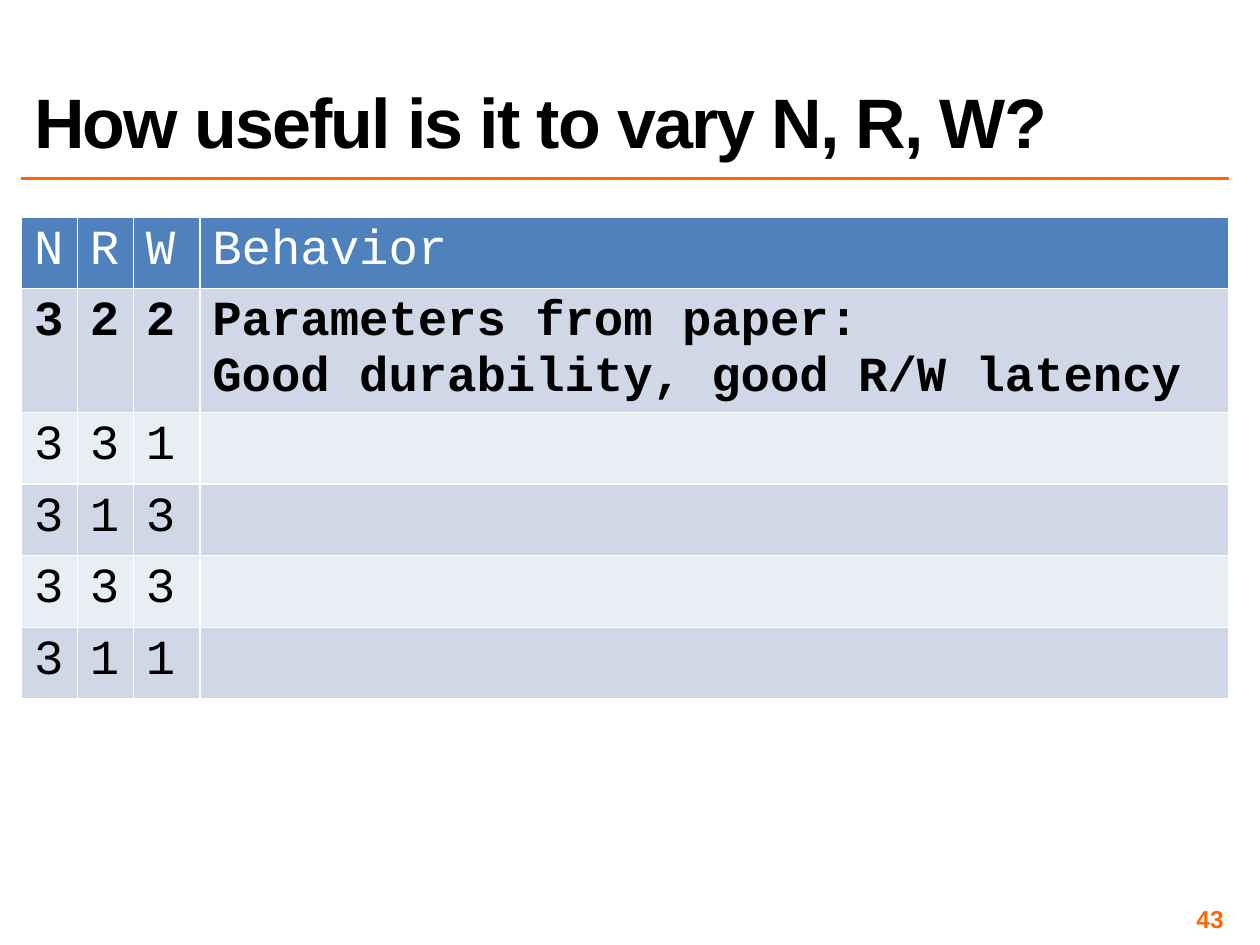
import pptx
import pptx.util
import pptx.dml.color
import pptx.enum.shapes
import pptx.enum.text
import pptx.oxml.ns
from lxml import etree

Pt = pptx.util.Pt
Anchor = pptx.enum.text.MSO_ANCHOR
Align = pptx.enum.text.PP_ALIGN

TITLE = "How useful is it to vary N, R, W?"
PAGE = "43"
HEADER = ("N", "R", "W", "Behavior")
SETTINGS = [
    ("3", "2", "2", "Parameters from paper:\nGood durability, good R/W latency"),
    ("3", "3", "1", ""),
    ("3", "1", "3", ""),
    ("3", "3", "3", ""),
    ("3", "1", "1", ""),
]
COLUMN_WIDTHS = (32, 32, 38, 588)
ROW_HEIGHT, PAPER_ROW_HEIGHT = 41, 70
LEFT, WIDTH = 12.25, 690
ORANGE, BLACK, WHITE = "FF6600", "000000", "FFFFFF"
HEADER_FILL, BANDS = "4F81BD", ("D0D8E8", "E9EDF4")


def rgb(value):
    return pptx.dml.color.RGBColor.from_string(value)


def style(text_frame, font_name, size, color, bold):
    for paragraph in text_frame.paragraphs:
        for font in [paragraph.font] + [run.font for run in paragraph.runs]:
            font.name, font.size, font.bold = font_name, Pt(size), bold
            font.color.rgb = rgb(color)


def add_borders(cell, color, width):
    """Draw all four cell edges; they must precede the fill in the XML."""
    properties = cell._tc.get_or_add_tcPr()
    for position, edge in enumerate(("a:lnL", "a:lnR", "a:lnT", "a:lnB")):
        line = etree.Element(pptx.oxml.ns.qn(edge), w=str(Pt(width)))
        fill = etree.SubElement(line, pptx.oxml.ns.qn("a:solidFill"))
        etree.SubElement(fill, pptx.oxml.ns.qn("a:srgbClr"), val=color)
        properties.insert(position, line)


def add_title(slide):
    title = slide.shapes.title
    title.left, title.top, title.width, title.height = Pt(LEFT), Pt(12.25), Pt(WIDTH), Pt(84)
    frame = title.text_frame
    frame.text = TITLE
    frame.auto_size = pptx.enum.text.MSO_AUTO_SIZE.NONE
    frame.vertical_anchor = Anchor.BOTTOM
    heading = frame.paragraphs[0]
    heading.alignment, heading.line_spacing = Align.LEFT, 0.8
    style(frame, "Arial", 40, BLACK, True)
    heading.runs[0].font._element.set("spc", "-100")


def add_rule(slide):
    rule = slide.shapes.add_connector(
        pptx.enum.shapes.MSO_CONNECTOR.STRAIGHT, Pt(LEFT), Pt(102), Pt(LEFT + WIDTH), Pt(102))
    rule.line.color.rgb = rgb(ORANGE)
    rule.line.width = Pt(2)
    etree.SubElement(rule._element.spPr, pptx.oxml.ns.qn("a:effectLst"))


def add_settings_table(slide):
    rows = [HEADER] + SETTINGS
    heights = [PAPER_ROW_HEIGHT if "\n" in row[-1] else ROW_HEIGHT for row in rows]
    table = slide.shapes.add_table(
        len(rows), len(HEADER), Pt(LEFT), Pt(124), Pt(WIDTH), Pt(sum(heights))).table
    for column, width in zip(table.columns, COLUMN_WIDTHS):
        column.width = Pt(width)
    for r, (row, height) in enumerate(zip(rows, heights)):
        table.rows[r].height = Pt(height)
        for c, text in enumerate(row):
            cell = table.cell(r, c)
            cell.text_frame.text = text
            style(cell.text_frame, "Courier New", 28, BLACK if r else WHITE, r == 1)
            cell.fill.solid()
            cell.fill.fore_color.rgb = rgb(BANDS[(r - 1) % 2] if r else HEADER_FILL)
            add_borders(cell, WHITE, 1)


def add_page_number(slide):
    frame = slide.shapes.add_textbox(Pt(534.25), Pt(516.5), Pt(168), Pt(16.5)).text_frame
    frame.margin_left = frame.margin_right = frame.margin_top = frame.margin_bottom = Pt(3)
    frame.word_wrap = True
    frame.vertical_anchor = Anchor.MIDDLE
    frame.text = PAGE
    frame.paragraphs[0].alignment = Align.RIGHT
    style(frame, "Arial", 14, ORANGE, True)


def main():
    deck = pptx.Presentation()
    deck.slide_width, deck.slide_height = Pt(720), Pt(540)
    slide = deck.slides.add_slide(deck.slide_layouts.get_by_name("Title Only"))
    add_rule(slide)
    add_title(slide)
    add_settings_table(slide)
    add_page_number(slide)
    deck.save("out.pptx")


if __name__ == "__main__":
    main()
